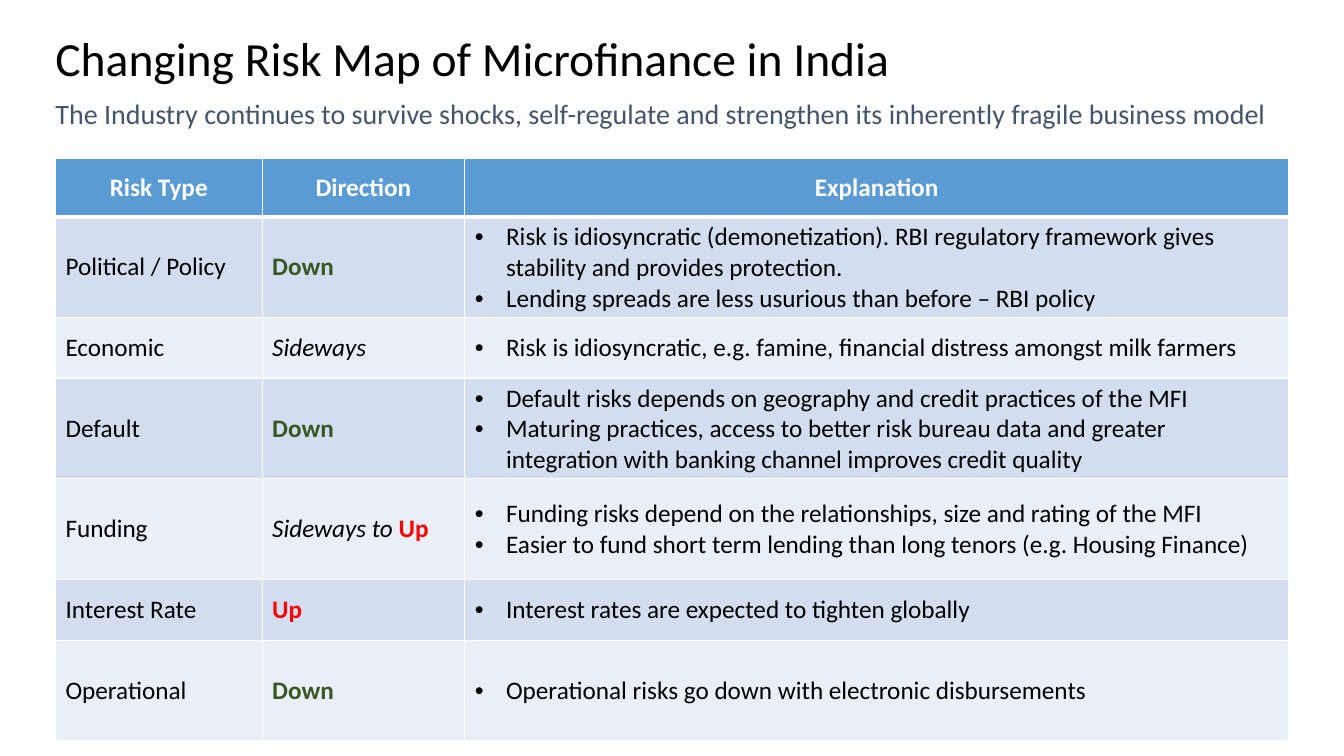
import lxml.etree
import pptx
import pptx.dml.color
import pptx.enum.text
import pptx.oxml.ns
import pptx.util

Inches = pptx.util.Inches
Pt = pptx.util.Pt
RGBColor = pptx.dml.color.RGBColor
qn = pptx.oxml.ns.qn

FONT = "Calibri"
BLACK = RGBColor(0x00, 0x00, 0x00)
WHITE = RGBColor(0xFF, 0xFF, 0xFF)
SLATE = RGBColor(0x44, 0x54, 0x6A)
GREEN = RGBColor(0x38, 0x57, 0x23)
RED = RGBColor(0xFF, 0x00, 0x00)
HEADER_BLUE = RGBColor(0x5B, 0x9B, 0xD5)
BAND_FILLS = [RGBColor(0xD2, 0xDE, 0xEF), RGBColor(0xEA, 0xEF, 0xF7)]

LEFT, WIDTH = 0.55, 12.24
COLUMN_WIDTHS = [2.05, 2.01, 8.17]
ROW_HEIGHTS = [0.58, 1, 0.6, 1, 1, 0.6, 1]
BULLET_INDENT = 0.31

HEADERS = ["Risk Type", "Direction", "Explanation"]
# Risk type, direction words, explanation bullets
RISKS = [
    ("Political / Policy", ["Down"], [
        "Risk is idiosyncratic (demonetization). RBI regulatory framework "
        "gives stability and provides protection.",
        "Lending spreads are less usurious than before – RBI policy"]),
    ("Economic", ["Sideways"], [
        "Risk is idiosyncratic, e.g. famine, financial distress amongst milk farmers"]),
    ("Default", ["Down"], [
        "Default risks depends on geography and credit practices of the MFI",
        "Maturing practices, access to better risk bureau data and greater "
        "integration with banking channel improves credit quality"]),
    ("Funding", ["Sideways to ", "Up"], [
        "Funding risks depend on the relationships, size and rating of the MFI",
        "Easier to fund short term lending than long tenors (e.g. Housing Finance)"]),
    ("Interest Rate", ["Up"], ["Interest rates are expected to tighten globally"]),
    ("Operational", ["Down"], ["Operational risks go down with electronic disbursements"]),
]
DIRECTION_COLORS = {"Down": GREEN, "Up": RED}


def set_font(font, size, color, bold=False):
    font.name = FONT
    font.size = Pt(size)
    font.color.rgb = color
    font.bold = bold


def add_heading(slide, text, top, height, size, color):
    frame = slide.shapes.add_textbox(
        Inches(LEFT), Inches(top), Inches(WIDTH), Inches(height)).text_frame
    frame.word_wrap = True
    frame.margin_left = frame.margin_right = 0
    frame.margin_top = frame.margin_bottom = 0
    paragraph = frame.paragraphs[0]
    paragraph.text = text
    paragraph.line_spacing = 0.9
    set_font(paragraph.font, size, color)


def set_borders(cell, top_width, bottom_width):
    properties = cell._tc.get_or_add_tcPr()
    widths = {"lnL": 1, "lnR": 1, "lnT": top_width, "lnB": bottom_width}
    for position, (side, width) in enumerate(widths.items()):
        line = lxml.etree.Element(qn("a:" + side), w=str(Pt(width)))
        fill = lxml.etree.SubElement(line, qn("a:solidFill"))
        lxml.etree.SubElement(fill, qn("a:srgbClr"), val=str(WHITE))
        properties.insert(position, line)


def style_cell(cell, fill, top_width=1, bottom_width=1):
    cell.vertical_anchor = pptx.enum.text.MSO_ANCHOR.MIDDLE
    cell.fill.solid()
    cell.fill.fore_color.rgb = fill
    set_borders(cell, top_width, bottom_width)


def write_direction(cell, words):
    paragraph = cell.text_frame.paragraphs[0]
    set_font(paragraph.font, 18, BLACK)
    for word in words:
        run = paragraph.add_run()
        run.text = word
        color = DIRECTION_COLORS.get(word)
        set_font(run.font, 18, color or BLACK, bold=color is not None)
        run.font.italic = color is None


def write_bullets(cell, items):
    cell.text = "\n".join(items)
    for paragraph in cell.text_frame.paragraphs:
        set_font(paragraph.font, 18, BLACK)
        properties = paragraph._p.get_or_add_pPr()
        properties.set("marL", str(Inches(BULLET_INDENT)))
        properties.set("indent", str(-Inches(BULLET_INDENT)))
        bullet_font = lxml.etree.Element(qn("a:buFont"), typeface="Arial")
        bullet = lxml.etree.Element(qn("a:buChar"), char="•")
        properties.insert(0, bullet_font)
        properties.insert(1, bullet)


def add_risk_table(slide):
    table = slide.shapes.add_table(
        len(ROW_HEIGHTS), len(COLUMN_WIDTHS), Inches(LEFT), Inches(1.57),
        Inches(WIDTH), Inches(sum(ROW_HEIGHTS))).table
    for column, width in zip(table.columns, COLUMN_WIDTHS):
        column.width = Inches(width)
    for row, height in zip(table.rows, ROW_HEIGHTS):
        row.height = Inches(height)

    # Header row
    for cell, header in zip(table.rows[0].cells, HEADERS):
        style_cell(cell, HEADER_BLUE, bottom_width=3)
        cell.text = header
        paragraph = cell.text_frame.paragraphs[0]
        paragraph.alignment = pptx.enum.text.PP_ALIGN.CENTER
        set_font(paragraph.font, 18, WHITE, bold=True)

    # Banded risk rows
    for index, (risk, direction, explanation) in enumerate(RISKS):
        cells = list(table.rows[index + 1].cells)
        for cell in cells:
            style_cell(cell, BAND_FILLS[index % 2], top_width=3 if index == 0 else 1)
        cells[0].text = risk
        set_font(cells[0].text_frame.paragraphs[0].font, 18, BLACK)
        write_direction(cells[1], direction)
        write_bullets(cells[2], explanation)


def main():
    presentation = pptx.Presentation()
    presentation.slide_width = Inches(13.33)
    presentation.slide_height = Inches(7.5)
    slide = presentation.slides.add_slide(presentation.slide_layouts[6])

    # Title and subtitle
    add_heading(slide, "Changing Risk Map of Microfinance in India", 0.35, 0.37, 34, BLACK)
    add_heading(slide, "The Industry continues to survive shocks, self-regulate and "
                "strengthen its inherently fragile business model", 1, 0.83, 20, SLATE)

    add_risk_table(slide)
    presentation.save("out.pptx")


if __name__ == "__main__":
    main()
